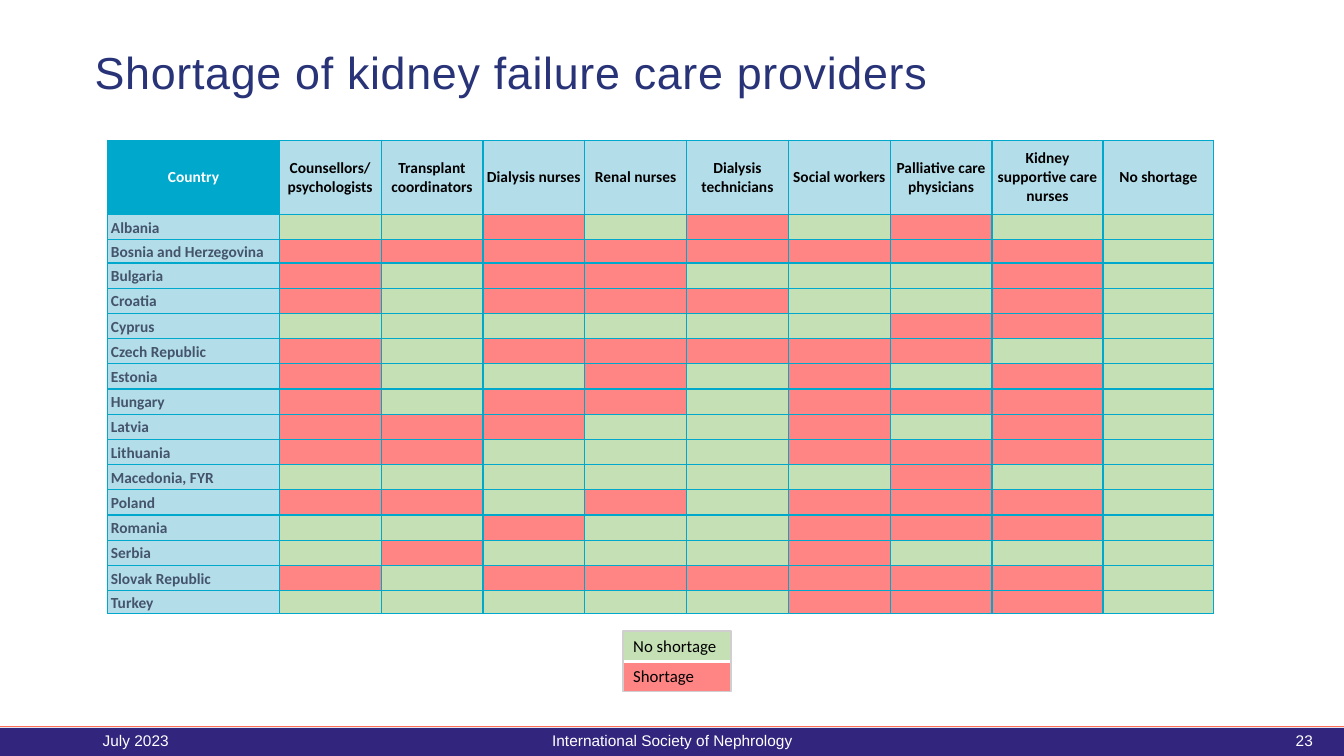
from lxml.etree import SubElement
from pptx import Presentation
from pptx.dml.color import RGBColor
from pptx.enum.shapes import MSO_CONNECTOR, MSO_SHAPE
from pptx.enum.text import MSO_ANCHOR, PP_ALIGN
from pptx.oxml.ns import qn
from pptx.util import Inches, Pt

NAVY, TEAL, PALE_BLUE, WHITE = "32257E", "00A8CB", "B4DDEA", "FFFFFF"
STATUS_FILLS = {".": "C5E0B4", "x": "FF8585"}
PROVIDERS = ["Counsellors/ psychologists", "Transplant coordinators", "Dialysis nurses",
             "Renal nurses", "Dialysis technicians", "Social workers",
             "Palliative care physicians", "Kidney supportive care nurses", "No shortage"]
# One mark per provider column: x = shortage, . = no shortage
SHORTAGES = {
    "Albania":                "..x.x.x..",
    "Bosnia and Herzegovina": "xxxxxxxx.",
    "Bulgaria":               "x.xx...x.",
    "Croatia":                "x.xxx..x.",
    "Cyprus":                 "......xx.",
    "Czech Republic":         "x.xxxxx..",
    "Estonia":                "x..x.x.x.",
    "Hungary":                "x.xx.xxx.",
    "Latvia":                 "xxx..x.x.",
    "Lithuania":              "xx...xxx.",
    "Macedonia, FYR":         "......x..",
    "Poland":                 "xx.x.xxx.",
    "Romania":                "..x..xxx.",
    "Serbia":                 ".x...x...",
    "Slovak Republic":        "x.xxxxxx.",
    "Turkey":                 ".....xxx.",
}


def write(frame, text, font, size, color, bold=False, align=PP_ALIGN.LEFT, spacing=1.0):
    """Put one formatted line of text in a frame and return its run."""
    paragraph = frame.paragraphs[0]
    paragraph.alignment, paragraph.line_spacing = align, spacing
    run = paragraph.add_run()
    run.text = text
    formats = {"name": font, "size": Pt(size), "bold": bold}
    for attribute, value in formats.items():
        setattr(run.font, attribute, value)
    run.font.color.rgb = RGBColor.from_string(color)
    return run


def paint(cell, fill, border, bottom_width=1):
    """Give a cell its borders and then its fill, the order the file needs."""
    cell.vertical_anchor = MSO_ANCHOR.MIDDLE
    properties = cell._tc.get_or_add_tcPr()
    for side in "LRTB":
        width = bottom_width if side == "B" else 1
        edge = SubElement(properties, qn(f"a:ln{side}"), w=str(Pt(width)))
        SubElement(SubElement(edge, qn("a:solidFill")), qn("a:srgbClr"), val=border)
    cell.fill.solid()
    cell.fill.fore_color.rgb = RGBColor.from_string(fill)


prs = Presentation()
prs.slide_width, prs.slide_height = Inches(13.33), Inches(7.5)
slide = prs.slides.add_slide(prs.slide_layouts[6])
shapes = slide.shapes

# Footer band
band = shapes.add_shape(MSO_SHAPE.RECTANGLE, 0, Inches(7.22), Inches(13.33), Inches(0.28))
band.shadow.inherit = False
band.fill.solid()
band.fill.fore_color.rgb = RGBColor.from_string(NAVY)
band.line.fill.background()
rule = shapes.add_connector(MSO_CONNECTOR.STRAIGHT, 0, Inches(7.21), Inches(13.33), Inches(7.21))
rule.line.color.rgb = RGBColor.from_string("FE7055")
rule.line.width = Pt(0.75)
SubElement(rule._element.spPr, qn("a:effectLst"))

# Shortage table
column_widths = [1.7] + [1.01] * 7 + [1.1] * 2
row_heights = [0.74] + [0.23 if country in ("Bosnia and Herzegovina", "Turkey") else 0.25
                        for country in SHORTAGES]
shortage_table = shapes.add_table(len(row_heights), len(column_widths), Inches(1.07), Inches(1.39),
                                  Inches(10.97), Inches(4.68)).table
for column, width in zip(shortage_table.columns, column_widths):
    column.width = Inches(width)
for row, height in zip(shortage_table.rows, row_heights):
    row.height = Inches(height)

for c, heading in enumerate(["Country"] + PROVIDERS):
    cell = shortage_table.cell(0, c)
    cell.margin_left = cell.margin_right = Inches(0.01)
    cell.margin_top = cell.margin_bottom = 0
    paint(cell, PALE_BLUE if c else TEAL, TEAL)
    write(cell.text_frame, heading, "Calibri", 11, "000000" if c else WHITE, True, PP_ALIGN.CENTER)

for r, (country, marks) in enumerate(SHORTAGES.items(), 1):
    for c, fill in enumerate([PALE_BLUE] + [STATUS_FILLS[mark] for mark in marks]):
        cell = shortage_table.cell(r, c)
        cell.margin_left = cell.margin_right = Inches(0.03)
        cell.margin_top = cell.margin_bottom = 0
        paint(cell, fill, TEAL)
        if c == 0:
            write(cell.text_frame, country, "Calibri", 11, "44546A", True, spacing=1.07)
        else:  # a small end mark keeps the empty cell from stretching its row
            SubElement(cell.text_frame.paragraphs[0]._p, qn("a:endParaRPr"), sz="800")

# Legend
legend_box = [Inches(n) for n in (6.18, 6.26, 1.07, 0.6)]
legend = shapes.add_table(2, 1, *legend_box).table
for r, (label, mark, bottom_width) in enumerate([("No shortage", ".", 3), ("Shortage", "x", 1)]):
    cell = legend.cell(r, 0)
    paint(cell, STATUS_FILLS[mark], WHITE, bottom_width)
    write(cell.text_frame, label, "Calibri", 12, "000000")
legend_frame = shapes.add_shape(MSO_SHAPE.RECTANGLE, *legend_box)
legend_frame.shadow.inherit = False
legend_frame.fill.background()
legend_frame.line.color.rgb = RGBColor.from_string("D0CECE")
legend_frame.line.width = Pt(1)

# Title and footer texts
for text, box, size, color, align, tracking in [
    ("Shortage of kidney failure care providers", (0.84, 0.39, 9.26, 0.71), 32, "283378",
     PP_ALIGN.LEFT, 50),
    ("July 2023", (0.92, 7.15, 3, 0.4), 11, WHITE, PP_ALIGN.LEFT, 0),
    ("International Society of Nephrology", (4.42, 7.15, 4.5, 0.4), 11, WHITE, PP_ALIGN.CENTER, 0),
    ("23", (9.42, 7.15, 3.7, 0.4), 11, WHITE, PP_ALIGN.RIGHT, 0),
]:
    frame = shapes.add_textbox(*[Inches(n) for n in box]).text_frame
    frame.word_wrap = True
    frame.vertical_anchor = MSO_ANCHOR.MIDDLE
    run = write(frame, text, "Arial", size, color, align=align, spacing=0.9 if tracking else 1.0)
    if tracking:
        run.font._element.set("spc", str(tracking))

prs.save("out.pptx")
